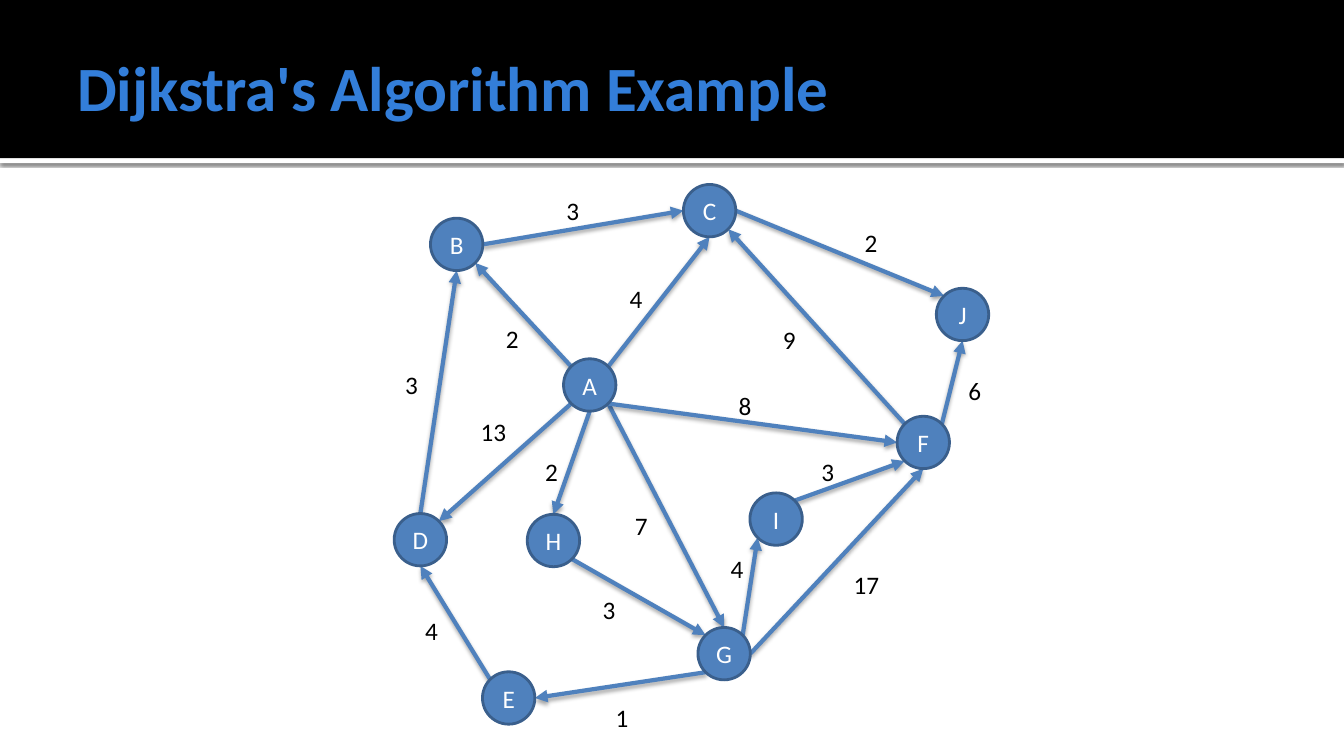
from math import cos, radians, sin

from lxml import etree
from pptx import Presentation
from pptx.dml.color import RGBColor
from pptx.enum.shapes import MSO_CONNECTOR as Connector, MSO_SHAPE as Shape
from pptx.enum.text import MSO_ANCHOR as Anchor, MSO_AUTO_SIZE as AutoSize, PP_ALIGN as Align
from pptx.oxml.ns import qn
from pptx.util import Inches, Pt

SLIDE_W, SLIDE_H = Inches(13.33), Inches(7.5)
FONT = "Calibri"
BLACK, WHITE = "000000", "FFFFFF"
TITLE_BLUE, GRAPH_BLUE, NODE_RIM = "337ED9", "4F81BD", "3A5F8C"
NODE_SIZE = 3.9     # percent of the slide width
LABEL_HEIGHT = 5.33  # percent of the slide height

# Node centres, in percent of the slide width and height
NODES = {
    "A": (43.88, 50.93), "B": (33.98, 32.33), "C": (52.8, 27.87),
    "D": (31.28, 71.4), "E": (37.85, 92.33), "F": (68.7, 58.53),
    "G": (53.88, 86.47), "H": (41.18, 71.5), "I": (57.75, 68.67),
    "J": (71.62, 41.6),
}

# Compass sides of a node, as degrees clockwise from east
SIDES = {side: 45 * i for i, side in enumerate(("E", "SE", "S", "SW", "W", "NW", "N", "NE"))}

# Start node and side, end node and side, weight, weight centre in percent
EDGES = [
    ("A", "SE", "G", "N", "7", 47.59, 69.47),
    ("G", "SW", "E", "E", "1", 46.16, 94.93),
    ("A", "NW", "B", "SE", "2", 37.99, 44.8),
    ("D", "N", "B", "S", "3", 30.49, 50.8),
    ("E", "NW", "D", "S", "4", 31.99, 83.33),
    ("A", "SE", "F", "W", "8", 55.31, 53.6),
    ("B", "E", "C", "W", "3", 42.49, 27.87),
    ("F", "NW", "C", "SE", "9", 58.61, 44.93),
    ("A", "SW", "D", "NE", "13", 36.71, 57.07),
    ("A", "NE", "C", "S", "4", 47.21, 39.47),
    ("G", "E", "F", "S", "17", 64.46, 77.33),
    ("A", "S", "H", "N", "2", 40.91, 62.4),
    ("H", "SE", "G", "NW", "3", 45.19, 80.67),
    ("C", "E", "J", "NW", "2", 64.69, 32.13),
    ("F", "NE", "J", "S", "6", 72.41, 51.6),
    ("G", "NE", "I", "SW", "4", 54.71, 75.2),
    ("I", "NE", "F", "SW", "3", 61.46, 62.4),
]
# Weight box widths in percent; the box of 13 is narrow enough to wrap
WEIGHT_WIDTHS = {"13": 3.38, "17": 4.88}


def color(hex_code):
    return RGBColor.from_string(hex_code)


def across(percent):
    return round(SLIDE_W * percent / 100)


def down(percent):
    return round(SLIDE_H * percent / 100)


def style_text(paragraph, size, hex_code, bold=False, align=Align.CENTER):
    paragraph.alignment = align
    font = paragraph.font
    font.name, font.size, font.bold = FONT, Pt(size), bold
    font.color.rgb = color(hex_code)


def add_shadow(shape, blur, distance, opacity):
    effects = etree.SubElement(shape._element.spPr, qn("a:effectLst"))
    shadow = etree.SubElement(effects, qn("a:outerShdw"), blurRad=str(Pt(blur)),
                              dist=str(Pt(distance)), dir="5400000", rotWithShape="0")
    tint = etree.SubElement(shadow, qn("a:srgbClr"), val=BLACK)
    etree.SubElement(tint, qn("a:alpha"), val=str(opacity * 1000))


def add_band(slide, top, height, hex_code):
    band = slide.shapes.add_shape(Shape.RECTANGLE, 0, down(top), SLIDE_W, down(height))
    band.fill.solid()
    band.fill.fore_color.rgb = color(hex_code)
    band.line.fill.background()
    return band


def add_title(slide, text):
    title = slide.shapes.title
    title.left, title.top = across(5), down(2.27)
    title.width, title.height = across(90), down(18.27)
    frame = title.text_frame
    frame.text = text
    frame.vertical_anchor = Anchor.MIDDLE
    frame.margin_left = Inches(0.1)
    frame.margin_top = frame.margin_right = frame.margin_bottom = Inches(0.05)
    style_text(frame.paragraphs[0], 45, TITLE_BLUE, bold=True, align=Align.LEFT)
    # Bring the title in front of the header bands
    slide.shapes._spTree.append(title._element)


def rim_point(node, side):
    x, y = NODES[node]
    angle, radius = radians(SIDES[side]), across(NODE_SIZE) / 2
    return round(across(x) + radius * cos(angle)), round(down(y) + radius * sin(angle))


def add_arrow(slide, start, end):
    arrow = slide.shapes.add_connector(Connector.STRAIGHT, *start, *end)
    arrow.line.color.rgb = color(GRAPH_BLUE)
    arrow.line.width = Pt(3)
    etree.SubElement(arrow.line._get_or_add_ln(), qn("a:tailEnd"), type="triangle")
    add_shadow(arrow, 3.1, 1.8, 35)


def add_node(slide, name):
    x, y = NODES[name]
    size = across(NODE_SIZE)
    node = slide.shapes.add_shape(Shape.OVAL, across(x) - size // 2, down(y) - size // 2, size, size)
    node.shadow.inherit = False
    node.fill.solid()
    node.fill.fore_color.rgb = color(GRAPH_BLUE)
    node.line.color.rgb = color(NODE_RIM)
    node.line.width = Pt(2)
    frame = node.text_frame
    frame.margin_left = frame.margin_right = frame.margin_top = frame.margin_bottom = 0
    frame.vertical_anchor = Anchor.MIDDLE
    frame.text = name
    style_text(frame.paragraphs[0], 18, WHITE)


def add_weight(slide, weight, x, y):
    width = WEIGHT_WIDTHS.get(weight, 2.18)
    label = slide.shapes.add_textbox(across(x - width / 2), down(y - LABEL_HEIGHT / 2),
                                     across(width), down(LABEL_HEIGHT))
    frame = label.text_frame
    frame.word_wrap = True
    frame.auto_size = AutoSize.SHAPE_TO_FIT_TEXT
    frame.text = weight
    style_text(frame.paragraphs[0], 18, BLACK)


def main():
    prs = Presentation()
    prs.slide_width, prs.slide_height = SLIDE_W, SLIDE_H
    slide = prs.slides.add_slide(prs.slide_layouts[5])

    # Header
    rule = add_band(slide, 20.93, 0.67, WHITE)
    add_shadow(rule, 2.5, 0.8, 60)
    header = add_band(slide, 0, 20.93, BLACK)
    header.shadow.inherit = False
    add_title(slide, "Dijkstra's Algorithm Example")

    # Weighted graph: arrows behind nodes, weights in front
    for source, source_side, target, target_side, *_ in EDGES:
        add_arrow(slide, rim_point(source, source_side), rim_point(target, target_side))
    for name in NODES:
        add_node(slide, name)
    for *_, weight, x, y in EDGES:
        add_weight(slide, weight, x, y)

    prs.save("out.pptx")


if __name__ == "__main__":
    main()
